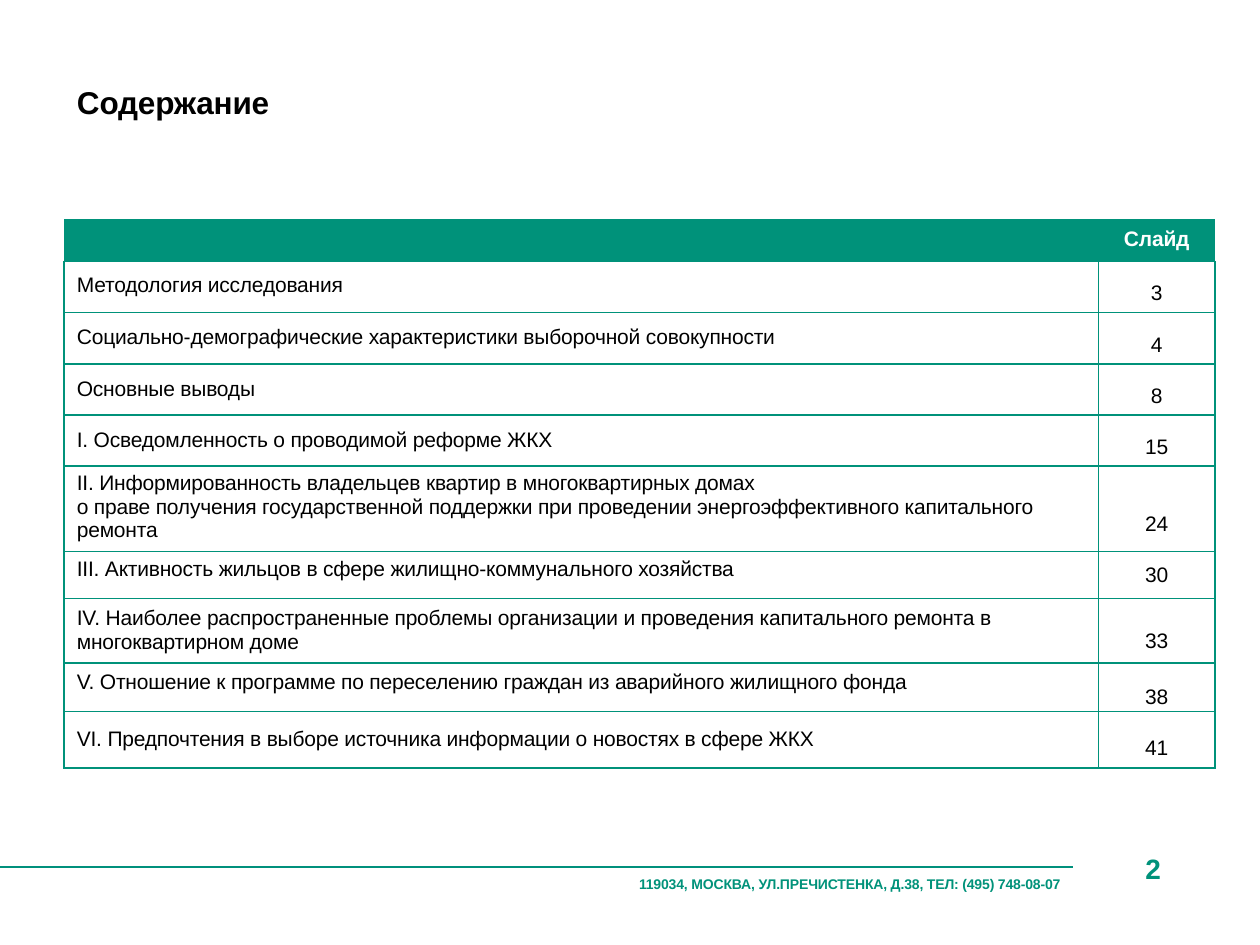
from pptx import Presentation
from pptx.dml.color import RGBColor
from pptx.enum.text import MSO_ANCHOR, PP_ALIGN
from pptx.oxml import parse_xml
from pptx.oxml.ns import nsdecls
from pptx.util import Pt

COLORS = {"green": "00927A", "rule": "00907C", "black": "000000", "white": "FFFFFF"}
TITLE = "Содержание"
ADDRESS = "119034, МОСКВА, УЛ.ПРЕЧИСТЕНКА, Д.38, ТЕЛ: (495) 748-08-07"
HEADER = ("", "Слайд", 24.3, 5, 5)
# text, slide number, row height, top inset of the text, top inset of the number
CONTENTS = [
    ("Методология исследования", "3", 29.2, 7, 7),
    ("Социально-демографические характеристики выборочной совокупности", "4", 29.2, 7.5, 7.5),
    ("Основные выводы", "8", 29.2, 7.5, 7.5),
    ("I. Осведомленность о проводимой реформе ЖКХ", "15", 29.2, 7.5, 7.5),
    ("II. Информированность владельцев квартир в многоквартирных домах\n"
     "о праве получения государственной поддержки при проведении "
     "энергоэффективного капитального ремонта", "24", 49, 3.3, 17),
    ("III. Активность жильцов в сфере жилищно-коммунального хозяйства", "30", 26.8, 3.3, 0.5),
    ("IV. Наиболее распространенные проблемы организации и проведения "
     "капитального ремонта в многоквартирном доме", "33", 36.7, 4.5, 11.7),
    ("V. Отношение к программе по переселению граждан из аварийного жилищного фонда",
     "38", 28, 4.5, 11.7),
    ("VI. Предпочтения в выборе источника информации о новостях в сфере ЖКХ",
     "41", 32.2, 9.1, 9.1),
]
COLUMNS = (591.1, 66.5)


def rgb(name):
    return RGBColor.from_string(COLORS[name])


def write(tf, text, size, color, bold=False, align=PP_ALIGN.LEFT):
    tf.text = text
    for p in tf.paragraphs:
        p.alignment = align
        p.font.size = Pt(size)
        for r in p.runs:
            r.font.name = "Arial"
            r.font.size = Pt(size)
            r.font.bold = bold
            r.font.color.rgb = rgb(color)
            r.font._element.set("spc", "-10")


def place(sp, left, top, width, height):
    sp.left, sp.top, sp.width, sp.height = Pt(left), Pt(top), Pt(width), Pt(height)
    tf = sp.text_frame
    tf.margin_left = tf.margin_right = tf.margin_top = tf.margin_bottom = 0
    tf.vertical_anchor = MSO_ANCHOR.TOP
    tf.word_wrap = False
    return tf


def add_borders(cell, color=None):
    fill = f'<a:solidFill><a:srgbClr val="{color}"/></a:solidFill>' if color else "<a:noFill/>"
    for side in "LRTB":
        cell._tc.get_or_add_tcPr().append(
            parse_xml(f'<a:ln{side} {nsdecls("a")} w="12700">{fill}</a:ln{side}>'))


def add_contents(s):
    rows = [HEADER] + CONTENTS
    frame = s.shapes.add_table(len(rows), len(COLUMNS), Pt(36.7), Pt(125.2),
                               Pt(sum(COLUMNS)), Pt(sum(row[2] for row in rows)))
    table = frame.table
    table.horz_banding = False
    for column, width in zip(table.columns, COLUMNS):
        column.width = Pt(width)
    for i, (text, number, height, text_top, number_top) in enumerate(rows):
        table.rows[i].height = Pt(height)
        head = i == 0
        for j, (value, top) in enumerate(((text, text_top), (number, number_top))):
            cell = table.cell(i, j)
            cell.margin_left = Pt(0 if j else 7.2)
            cell.margin_right = cell.margin_bottom = 0
            cell.margin_top = Pt(top)
            cell.vertical_anchor = MSO_ANCHOR.MIDDLE if j and not head else MSO_ANCHOR.TOP
            write(cell.text_frame, value, 12, "white" if head else "black", head,
                  PP_ALIGN.CENTER if j else PP_ALIGN.LEFT)
            add_borders(cell, None if head else COLORS["green"])
            if head:
                cell.fill.solid()
                cell.fill.fore_color.rgb = rgb("green")
            else:
                cell.fill.background()


def main():
    """Build the contents slide."""
    prs = Presentation()
    prs.slide_width, prs.slide_height = Pt(720), Pt(540)
    s = prs.slides.add_slide(prs.slide_layouts[5])

    rule = s.shapes.add_connector(1, 0, Pt(495.2), Pt(613.2), Pt(495.2))
    rule.line.color.rgb = rgb("rule")
    rule.line.width = Pt(1.2)
    rule._element.spPr.append(parse_xml(f'<a:effectLst {nsdecls("a")}/>'))

    write(place(s.shapes.title, 44, 47.5, 113, 22), TITLE, 18, "black", True)
    for text, size, box in (("2", 16, (654.5, 486.5, 21, 19)),
                            (ADDRESS, 8, (365.2, 500.4, 249, 11))):
        sp = s.shapes.add_textbox(0, 0, 0, 0)
        write(place(sp, *box), text, size, "green", True)
    add_contents(s)
    prs.save("out.pptx")


if __name__ == "__main__":
    main()
